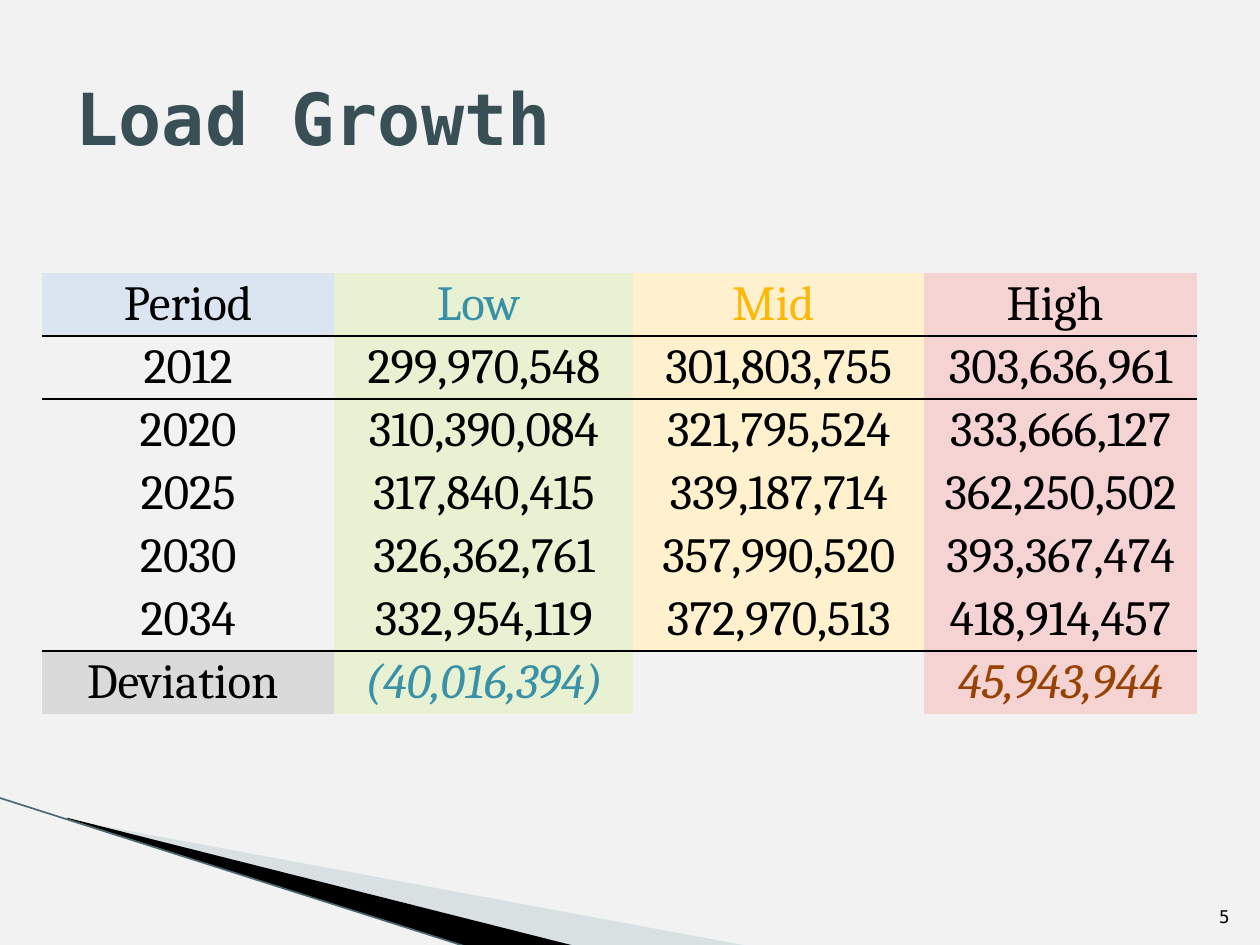
from lxml import etree
from pptx import Presentation
from pptx.dml.color import RGBColor
from pptx.enum.shapes import MSO_CONNECTOR
from pptx.enum.text import MSO_ANCHOR, PP_ALIGN
from pptx.oxml.ns import qn
from pptx.util import Pt

LEFT, CENTER, RIGHT = PP_ALIGN.LEFT, PP_ALIGN.CENTER, PP_ALIGN.RIGHT
MIDDLE, BOTTOM = MSO_ANCHOR.MIDDLE, MSO_ANCHOR.BOTTOM
STRAIGHT = MSO_CONNECTOR.STRAIGHT

MONO, SERIF = "DejaVu Sans Mono", "Cambria"
NO_STYLE_NO_GRID = "{2D5ABB26-0587-4C30-8999-92F81FD0307C}"
COLORS = {
    "background": "F2F2F2", "title": "384F55", "black": "000000",
    "pale_wedge": "B4C6CC", "edge": "4A6A72",
    "period": "DBE5F1", "low": "E8F2D3", "mid": "FFF1CE", "high": "F5D3D3",
    "deviation": "DADADA",
    "low_text": "3891A7", "mid_text": "FEB80A", "high_text": "964305",
}
ROWS = [
    ["Period", "Low ", "Mid ", "High "],
    ["2012", "299,970,548", "301,803,755", "303,636,961"],
    ["2020", "310,390,084", "321,795,524", "333,666,127"],
    ["2025", "317,840,415", "339,187,714", "362,250,502"],
    ["2030", "326,362,761", "357,990,520", "393,367,474"],
    ["2034", "332,954,119", "372,970,513", "418,914,457"],
    ["Deviation ", "(40,016,394)", "", "45,943,944"],
]
LAST = len(ROWS) - 1
COLUMN_WIDTHS = [167, 171, 166, 156]
ROW_HEIGHT = 36
COLUMN_FILLS = [None, "low", "mid", "high"]
FILL_EXCEPTIONS = {(0, 0): "period", (LAST, 0): "deviation", (LAST, 2): None}
TEXT_COLORS = {(0, 1): "low_text", (0, 2): "mid_text",
               (LAST, 1): "low_text", (LAST, 3): "high_text"}
RULED_EDGES = {0: "a:lnB", 1: "a:lnT", LAST - 1: "a:lnB", LAST: "a:lnT"}


def rgb(name):
    return RGBColor.from_string(COLORS[name])


def format_paragraph(p, font, size, color, align, bold=False, italic=False):
    p.alignment = align
    p.font.name, p.font.size = font, Pt(size)
    p.font.bold, p.font.italic = bold, italic
    p.font.color.rgb = rgb(color)


def add_wedge(s, points, color, opacity=100):
    start, *rest = [(Pt(x), Pt(y)) for x, y in points]
    builder = s.shapes.build_freeform(*start)
    builder.add_line_segments(rest)
    sp = builder.convert_to_shape()
    sp.shadow.inherit = False
    sp.line.fill.background()
    sp.fill.solid()
    sp.fill.fore_color.rgb = rgb(color)
    if opacity < 100:
        fill = sp.fill._xPr.find(qn("a:solidFill"))
        etree.SubElement(fill[0], qn("a:alpha"), val=str(opacity * 1000))


def add_edge_line(s, x1, y1, x2, y2):
    line = s.shapes.add_connector(STRAIGHT, Pt(x1), Pt(y1), Pt(x2), Pt(y2))
    line.line.color.rgb = rgb("edge")
    line.line.width = Pt(0.95)
    etree.SubElement(line._element.spPr, qn("a:effectLst"))


def add_title(s, text):
    title = s.shapes.title
    title.left, title.top, title.width, title.height = Pt(36), Pt(21.6), Pt(648), Pt(90)
    tf = title.text_frame
    tf.text = text
    tf.vertical_anchor = MIDDLE
    format_paragraph(tf.paragraphs[0], MONO, 41, "title", LEFT, bold=True)


def rule_cell(cell, edge):
    tc_pr = cell._tc.get_or_add_tcPr()
    ln = etree.Element(qn(edge), w=str(Pt(1)))
    fill = etree.SubElement(ln, qn("a:solidFill"))
    etree.SubElement(fill, qn("a:srgbClr"), val=COLORS["black"])
    tc_pr.insert(0, ln)


def format_cell(cell, row, col):
    cell.text = ROWS[row][col]
    cell.vertical_anchor = MIDDLE
    cell.margin_left = cell.margin_right = cell.margin_top = cell.margin_bottom = 0
    color = TEXT_COLORS.get((row, col), "black")
    format_paragraph(cell.text_frame.paragraphs[0], SERIF, 28, color, CENTER,
                     italic=row == LAST and col > 0)
    fill = FILL_EXCEPTIONS.get((row, col), COLUMN_FILLS[col])
    if fill:
        cell.fill.solid()
        cell.fill.fore_color.rgb = rgb(fill)
    else:
        cell.fill.background()
    if row in RULED_EDGES:
        rule_cell(cell, RULED_EDGES[row])


def add_growth_table(s, left, top):
    frame = s.shapes.add_table(len(ROWS), len(COLUMN_WIDTHS), Pt(left), Pt(top),
                               Pt(sum(COLUMN_WIDTHS)), Pt(ROW_HEIGHT * len(ROWS)))
    table = frame.table
    table.first_row = table.horz_banding = False
    table._tbl.tblPr.find(qn("a:tableStyleId")).text = NO_STYLE_NO_GRID
    for column, width in zip(table.columns, COLUMN_WIDTHS):
        column.width = Pt(width)
    for row, table_row in enumerate(table.rows):
        table_row.height = Pt(ROW_HEIGHT)
        for col, cell in enumerate(table_row.cells):
            format_cell(cell, row, col)


def add_page_number(s, text):
    tf = s.shapes.add_textbox(Pt(681), Pt(504.7), Pt(28.8), Pt(28.8)).text_frame
    tf.word_wrap = True
    tf.vertical_anchor = BOTTOM
    tf.text = text
    format_paragraph(tf.paragraphs[0], MONO, 10, "black", RIGHT)


def main():
    prs = Presentation()
    prs.slide_width, prs.slide_height = Pt(720), Pt(540)
    s = prs.slides.add_slide(prs.slide_layouts[5])
    s.background.fill.solid()
    s.background.fill.fore_color.rgb = rgb("background")
    add_wedge(s, [(39.6, 468.5), (428.4, 540.7), (328.3, 540.7), (39.6, 468)],
              "pale_wedge", opacity=40)
    add_wedge(s, [(38.2, 467.3), (329, 540.7), (267.8, 541.4), (38.9, 468)], "black")
    add_edge_line(s, -0.7, 455.8, 267.8, 541.4)
    add_title(s, "Load Growth")
    add_growth_table(s, 24, 156)
    add_page_number(s, "5")
    prs.save("out.pptx")


if __name__ == "__main__":
    main()
